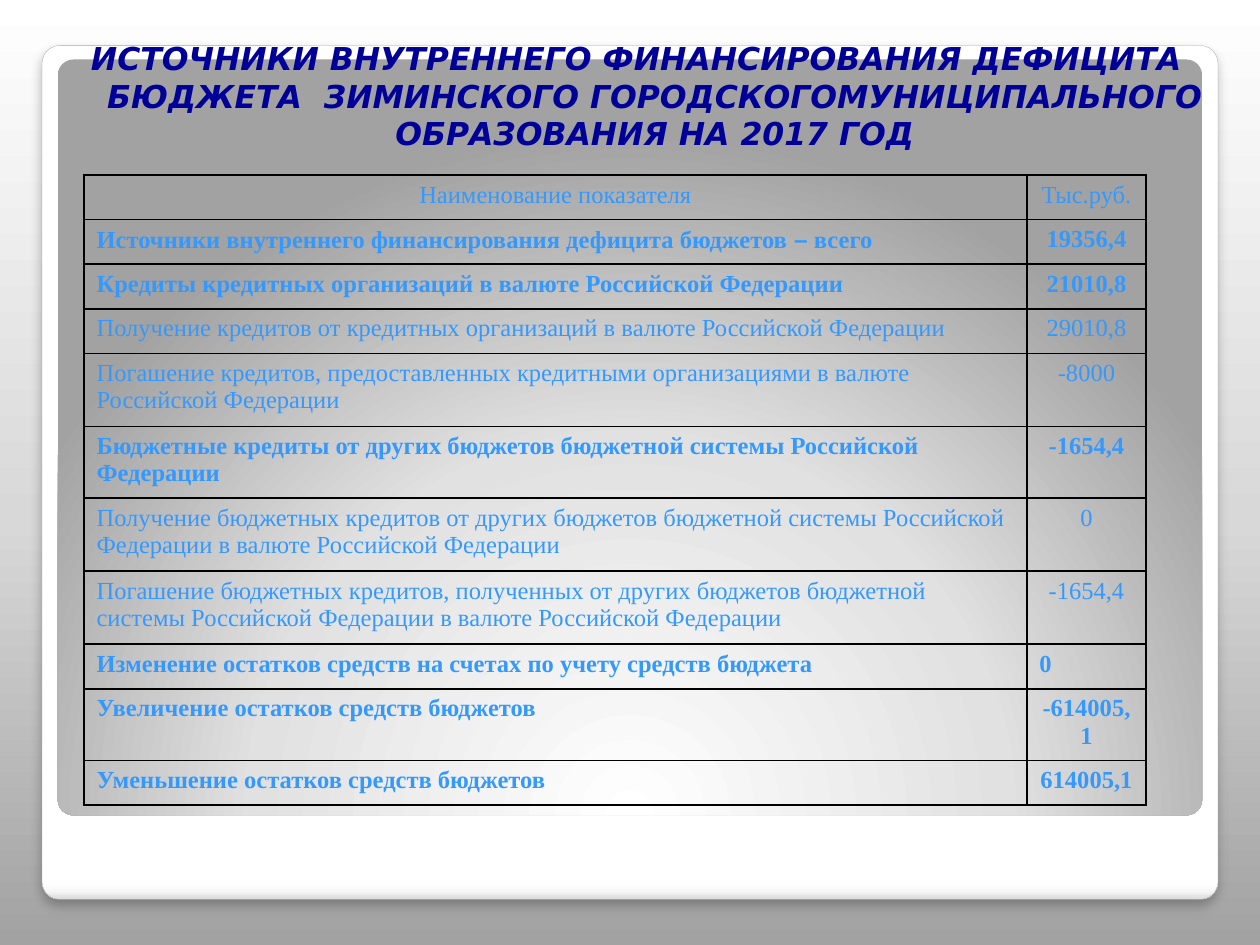
from pptx import Presentation, util as u
from pptx.dml.color import RGBColor
from pptx.enum import shapes, text
from pptx.oxml import parse_xml
from pptx.oxml.ns import nsdecls

COLORS = {"title": "000099", "cell": "3399FF", "border": "000000", "edge": "A4A4A4"}
SERIF = "Times New Roman"
TITLE = ("ИСТОЧНИКИ ВНУТРЕННЕГО ФИНАНСИРОВАНИЯ ДЕФИЦИТА БЮДЖЕТА  ЗИМИНСКОГО "
         "ГОРОДСКОГОМУНИЦИПАЛЬНОГО ОБРАЗОВАНИЯ НА 2017 ГОД")
C, L = text.PP_ALIGN.CENTER, text.PP_ALIGN.LEFT
LOW, HIGH = 25.5, 41.8
ROWS = [
    ("Наименование показателя", "Тыс.руб.", False, LOW, C, C),
    ("Источники внутреннего финансирования дефицита бюджетов – всего",
     "19356,4", True, LOW, L, C),
    ("Кредиты кредитных организаций в валюте Российской Федерации",
     "21010,8", True, LOW, L, C),
    ("Получение кредитов от кредитных организаций в валюте Российской Федерации",
     "29010,8", False, LOW, L, C),
    ("Погашение кредитов, предоставленных кредитными организациями в валюте "
     "Российской Федерации", "-8000", False, HIGH, L, C),
    ("Бюджетные кредиты от других бюджетов бюджетной системы Российской Федерации",
     "-1654,4", True, LOW, L, C),
    ("Получение бюджетных кредитов от других бюджетов бюджетной системы Российской "
     "Федерации в валюте Российской Федерации", "0", False, HIGH, L, C),
    ("Погашение бюджетных кредитов, полученных от других бюджетов бюджетной "
     "системы Российской Федерации в валюте Российской Федерации",
     "-1654,4", False, HIGH, L, C),
    ("Изменение остатков средств на счетах по учету средств бюджета",
     "0", True, LOW, L, L),
    ("Увеличение остатков средств бюджетов", "-614005,1", True, LOW, L, C),
    ("Уменьшение остатков средств бюджетов", "614005,1", True, LOW, L, C),
]
COLUMNS = (538.8, 68.2)
BACKDROP = [(0, "A2A2A2"), (45, "D8D8D8"), (100, "FFFFFF")]
FRAME = [(0, "FFFFFF"), (98, "FFFFFF"), (99, "F7F7F7"), (100, "DADADA")]
PANEL = [(0, "FFFFFF"), (55, "E1E1E1"), (100, "A2A2A2")]
RADIAL = ('<a:path path="circle"><a:fillToRect l="50000" t="175000" '
          'r="50000" b="-75000"/></a:path>')


def linear(degrees):
    return f'<a:lin ang="{degrees * 60000}" scaled="0"/>'


def set_gradient(fill, element, stops, direction):
    fill.gradient()
    grad = element.xpath(".//a:gradFill")[0]
    marks = "".join(f'<a:gs pos="{pos * 1000}"><a:srgbClr val="{color}"/></a:gs>'
                    for pos, color in stops)
    grad.getparent().replace(grad, parse_xml(
        f'<a:gradFill {nsdecls("a")} rotWithShape="1"><a:gsLst>{marks}</a:gsLst>'
        f'{direction}</a:gradFill>'))


def add_panel(s, box, stops, direction):
    sp = s.shapes.add_shape(shapes.MSO_SHAPE.ROUNDED_RECTANGLE, *map(u.Pt, box))
    sp.adjustments[0] = 0.021
    sp.shadow.inherit = False
    sp.line.fill.background()
    set_gradient(sp.fill, sp._element, stops, direction)
    return sp


def add_text(p, content, color, **formats):
    r = p.add_run()
    r.text = content
    for name, value in formats.items():
        setattr(r.font, name, value)
    r.font.color.rgb = RGBColor.from_string(COLORS[color])


def set_borders(cell):
    props = cell._tc.get_or_add_tcPr()
    for i, side in enumerate("LRTB"):
        props.insert(i, parse_xml(
            f'<a:ln{side} {nsdecls("a")} w="12700"><a:solidFill>'
            f'<a:srgbClr val="{COLORS["border"]}"/></a:solidFill></a:ln{side}>'))


def add_title(s):
    box = s.shapes.add_textbox(*map(u.Pt, (0, 15, 720, 79)))
    tf = box.text_frame
    for name, value in {"word_wrap": True, "margin_left": u.Pt(14.4),
                        "margin_top": u.Pt(7.2), "margin_right": u.Pt(7.2),
                        "margin_bottom": u.Pt(3.6)}.items():
        setattr(tf, name, value)
    p = tf.paragraphs[0]
    p.alignment, p.space_before = C, u.Pt(2.5)
    props = p._p.get_or_add_pPr()
    props.set("marL", str(u.Pt(21)))
    props.set("indent", str(u.Pt(-21)))
    add_text(p, TITLE, "title", size=u.Pt(18), name="DejaVu Sans", bold=True, italic=True)


def add_budget_table(s):
    height = sum(row[3] for row in ROWS)
    frame = s.shapes.add_table(len(ROWS), 2, *map(u.Pt, (48, 100, sum(COLUMNS), height)))
    table = frame.table
    table.first_row = table.horz_banding = False
    for column, width in zip(table.columns, COLUMNS):
        column.width = u.Pt(width)
    for i, (label, amount, bold, row_height, *aligns) in enumerate(ROWS):
        table.rows[i].height = u.Pt(row_height)
        for cell, content, align in zip(table.rows[i].cells, (label, amount), aligns):
            cell.fill.background()
            set_borders(cell)
            p = cell.text_frame.paragraphs[0]
            p.alignment = align
            before, dash, after = content.partition("–")
            for part, font in ((before, SERIF), (dash, "Arial"), (after, SERIF)):
                if part:
                    add_text(p, part, "cell", size=u.Pt(14), name=font, bold=bold)


def main():
    prs = Presentation()
    prs.slide_width, prs.slide_height = u.Pt(720), u.Pt(540)
    s = prs.slides.add_slide(prs.slide_layouts[6])
    set_gradient(s.background.fill, s._element, BACKDROP, linear(270))
    frame = add_panel(s, (24, 26, 672, 488), FRAME, linear(90))
    frame.line.color.rgb = RGBColor.from_string(COLORS["edge"])
    frame.line.width = u.Pt(0.16)
    frame._element.spPr.xpath("a:effectLst")[0].append(parse_xml(
        f'<a:outerShdw {nsdecls("a")} blurRad="{u.Pt(6)}" dist="{u.Pt(4)}" dir="5400000">'
        '<a:srgbClr val="000000"><a:alpha val="25000"/></a:srgbClr></a:outerShdw>'))
    add_panel(s, (33, 34, 654, 432), PANEL, RADIAL)
    add_title(s)
    add_budget_table(s)
    prs.save("out.pptx")


if __name__ == "__main__":
    main()
